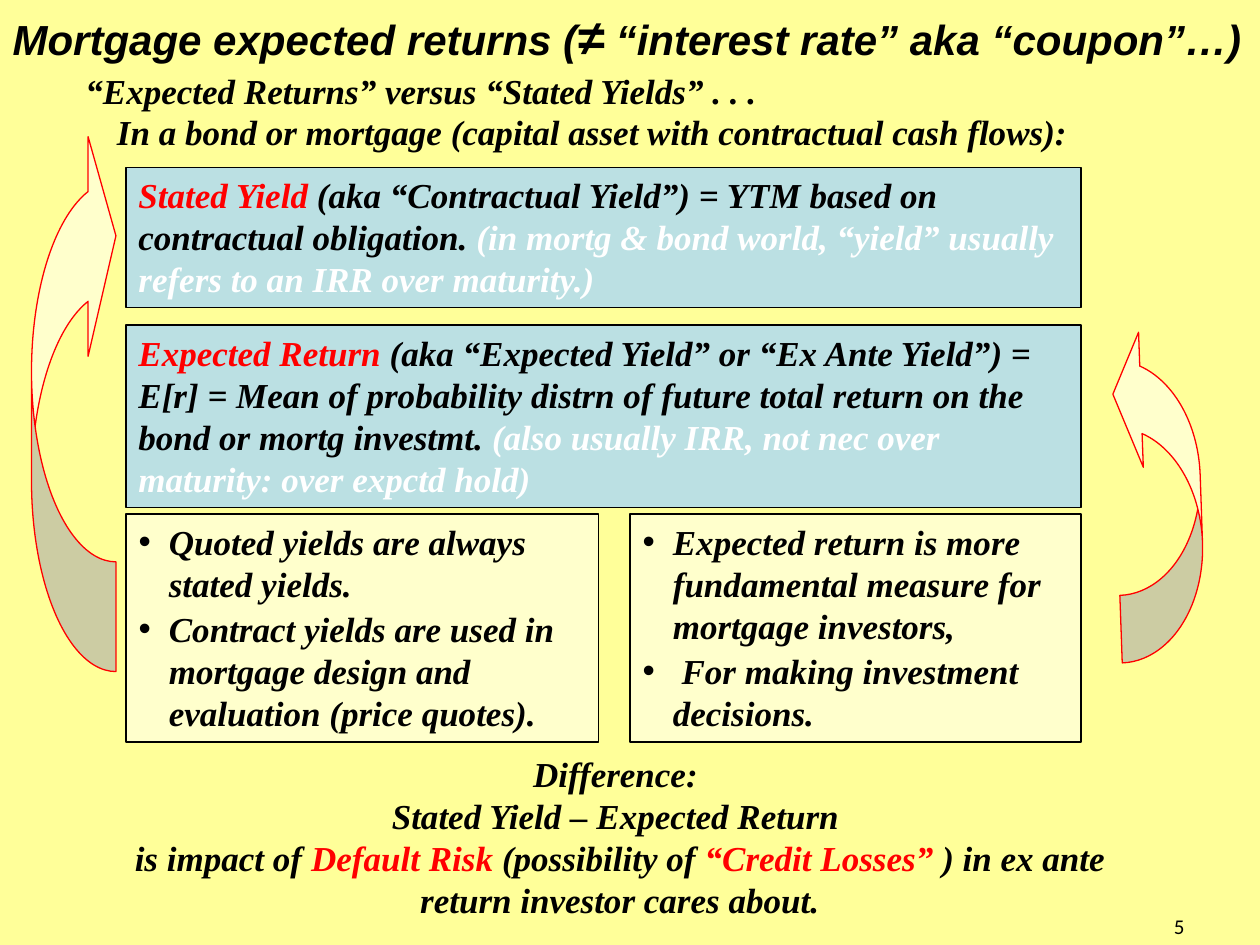
from lxml import etree
from pptx import Presentation
from pptx.dml.color import RGBColor
from pptx.enum.shapes import MSO_SHAPE
from pptx.enum.text import MSO_ANCHOR, MSO_AUTO_SIZE, PP_ALIGN
from pptx.oxml.ns import qn
from pptx.util import Inches, Pt

LEFT, CENTER, RIGHT = PP_ALIGN.LEFT, PP_ALIGN.CENTER, PP_ALIGN.RIGHT
TOP, BOTTOM = MSO_ANCHOR.TOP, MSO_ANCHOR.BOTTOM
NO_FIT = MSO_AUTO_SIZE.NONE
RECTANGLE = MSO_SHAPE.RECTANGLE
LEFT_ARROW, RIGHT_ARROW = MSO_SHAPE.CURVED_LEFT_ARROW, MSO_SHAPE.CURVED_RIGHT_ARROW
TWO_CONTENT = 3

COLORS = {
    "background": "FFFF99",
    "definition": "BBE0E3",
    "cream": "FFFFCC",
    "text": "000000",
    "key": "FF0000",
    "aside": "FFFFFF",
}


def color(name):
    return RGBColor.from_string(COLORS[name])


class SlideBuilder:
    font, size, outline = "Times New Roman", 20, 0.75
    bullet_indent = Inches(0.24)

    def __init__(self, slide):
        self.slide = slide
        slide.background.fill.solid()
        slide.background.fill.fore_color.rgb = color("background")

    def place(self, shape, left, top, width, height):
        shape.left, shape.top = Inches(left), Inches(top)
        shape.width, shape.height = Inches(width), Inches(height)

    def paint(self, shape, fill, line):
        shape.fill.solid()
        shape.fill.fore_color.rgb = color(fill)
        shape.line.color.rgb = color(line)
        shape.line.width = Pt(self.outline)

    def format_span(self, span, tint="text", size=None, font=None, strong=True):
        span.font.name = font or self.font
        span.font.size = Pt(size or self.size)
        span.font.bold = span.font.italic = strong
        span.font.color.rgb = color(tint)

    def fill_text(self, shape, paragraphs, align=LEFT, anchor=TOP, **style):
        """Fill a shape with paragraphs, each a list of (text, overrides) spans."""
        frame = shape.text_frame
        frame.word_wrap = True
        frame.auto_size = NO_FIT
        frame.vertical_anchor = anchor
        for index, spans in enumerate(paragraphs):
            para = frame.add_paragraph() if index else frame.paragraphs[0]
            para.alignment = align
            for text, overrides in spans:
                span = para.add_run()
                span.text = text
                self.format_span(span, **{**style, **overrides})

    def title(self, spans, *box):
        shape = self.slide.shapes.title
        self.place(shape, *box)
        self.fill_text(shape, [spans], font="Arial", size=24)

    def text(self, paragraphs, *box, **style):
        shape = self.slide.shapes.add_textbox(*map(Inches, box))
        self.fill_text(shape, paragraphs, **style)

    def definition(self, term, meaning, aside, *box):
        shape = self.slide.shapes.add_shape(RECTANGLE, *map(Inches, box))
        shape.shadow.inherit = False
        self.paint(shape, "definition", "text")
        self.fill_text(shape, [[(term, {"tint": "key"}), (meaning, {}),
                                (aside, {"tint": "aside"})]])

    def bullets(self, placeholder, items, *box):
        shape = self.slide.placeholders[placeholder]
        self.place(shape, *box)
        self.paint(shape, "cream", "text")
        self.fill_text(shape, [[(item, {})] for item in items])
        for para in shape.text_frame.paragraphs:
            para.space_before = Pt(2)
            properties = para._p.get_or_add_pPr()
            properties.set("marL", str(self.bullet_indent))
            properties.set("indent", str(-self.bullet_indent))
            etree.SubElement(properties, qn("a:buChar")).set("char", "•")

    def curved_arrow(self, kind, rotation, adjustments, *box):
        shape = self.slide.shapes.add_shape(kind, *map(Inches, box))
        shape.shadow.inherit = False
        shape.rotation = rotation
        for index, value in enumerate(adjustments):
            shape.adjustments[index] = value
        self.paint(shape, "cream", "key")


def main():
    deck = Presentation()
    deck.slide_width, deck.slide_height = Inches(10), Inches(7.5)
    page = SlideBuilder(deck.slides.add_slide(deck.slide_layouts[TWO_CONTENT]))

    page.title([("Mortgage expected returns (", {}), ("≠", {"size": 28}),
                (" “interest rate” aka “coupon”…)", {})], 0, 0, 10, 0.57)
    page.text([[("“Expected Returns” versus “Stated Yields” . . .", {})]],
              0.58, 0.5, 8.83, 0.43)
    page.text([[("In a bond or mortgage (capital asset with contractual cash flows):", {})]],
              0.83, 0.83, 8.33, 0.43)

    page.definition(
        "Stated Yield",
        " (aka “Contractual Yield”) = YTM based on contractual obligation. ",
        "(in mortg & bond world, “yield” usually refers to an IRR over maturity.)",
        1, 1.33, 7.58, 1.11)
    page.definition(
        "Expected Return",
        " (aka “Expected Yield” or “Ex Ante Yield”) = E[r] = Mean of probability "
        "distrn of future total return on the bond or mortg investmt. ",
        "(also usually IRR, not nec over maturity: over expctd hold)",
        1, 2.58, 7.58, 1.45)

    page.bullets(1, ["Quoted yields are always stated yields.",
                     "Contract yields are used in mortgage design and evaluation "
                     "(price quotes)."], 1, 4.08, 3.75, 1.81)
    page.bullets(2, ["Expected return is more fundamental measure for mortgage investors,",
                     " For making investment decisions."], 5, 4.08, 3.58, 1.81)

    page.curved_arrow(LEFT_ARROW, 180, (1.3, 2.6, 0.33), 0.25, 1, 0.67, 4.33)
    page.curved_arrow(RIGHT_ARROW, 178, (0.8, 1.6, 0.33), 8.86, 2.58, 0.67, 2.67)

    page.text([[("Difference: ", {})],
               [("Stated Yield – Expected Return ", {})],
               [("is impact of ", {}), ("Default Risk", {"tint": "key"}),
                (" (possibility of ", {}), ("“Credit Losses”", {"tint": "key"}),
                (" ) in ex ante return investor cares about.", {})]],
              0.67, 5.92, 8.5, 1.43, align=CENTER)
    page.text([[("5", {})]], 7.17, 6.98, 2.33, 0.52, align=RIGHT, anchor=BOTTOM,
              font="Calibri", size=12, strong=False)
    deck.save("out.pptx")


if __name__ == "__main__":
    main()
